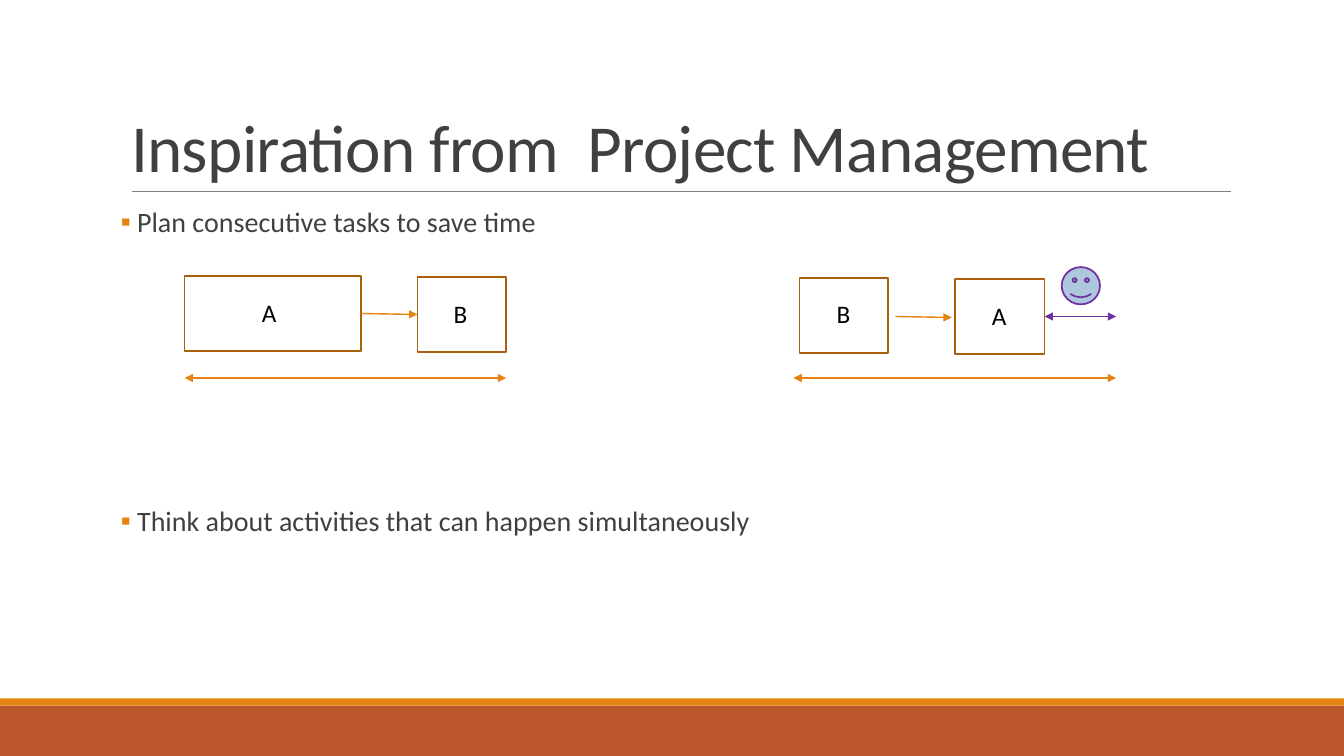
import dataclasses
import typing
import lxml.etree
import pptx
import pptx.dml.color
import pptx.enum.shapes
import pptx.enum.text
import pptx.oxml.ns
import pptx.util

RGB = pptx.dml.color.RGBColor
SHAPE = pptx.enum.shapes.MSO_SHAPE
TEXT = pptx.enum.text
Pt = pptx.util.Pt
qn = pptx.oxml.ns.qn

ORANGE = RGB(0xE4, 0x83, 0x12)
BROWN = RGB(0xA9, 0x61, 0x0D)
RUST = RGB(0xBD, 0x58, 0x2C)
PURPLE = RGB(0x70, 0x30, 0xA0)
BLUE = RGB(0xAD, 0xC8, 0xDD)
GRAY = RGB(0x80, 0x80, 0x80)
DARK = RGB(0x40, 0x40, 0x40)
BLACK = RGB(0, 0, 0)

SCALE = 9144
WIDE, HIGH = 1333, 750
TASK_HIGH = 74
LABEL_WIDE, LABEL_HIGH = 35, 40


@dataclasses.dataclass
class Block:
    left: int
    top: int
    width: int
    height: int
    fill: RGB | None = None
    line: RGB | None = None
    kind: SHAPE = SHAPE.RECTANGLE


@dataclasses.dataclass
class Task:
    name: str
    left: int
    top: int
    width: int
    label_left: int
    label_top: int


@dataclasses.dataclass
class Link:
    start: tuple[int, int]
    end: tuple[int, int]
    color: RGB = ORANGE
    weight: float = 1
    heads: tuple[str, ...] = ("tailEnd",)


BOTH = ("headEnd", "tailEnd")
BANDS = (
    Block(0, 700, WIDE, 50, fill=RUST),
    Block(0, 693, WIDE, 7, fill=ORANGE),
)
TASKS = (
    Task("A", 183, 274, 175, 250, 290),
    Task("B", 414, 275, 88, 440, 291),
    Task("B", 793, 276, 88, 820, 291),
    Task("A", 947, 277, 89, 974, 293),
)
LINKS = (
    Link((131, 190), (1221, 190), GRAY, 0.5, ()),
    Link((358, 311), (414, 312)),
    Link((888, 314), (944, 315)),
    Link((183, 375), (502, 375), heads=BOTH),
    Link((787, 375), (1107, 375), heads=BOTH),
    Link((1036, 314), (1107, 314), PURPLE, heads=BOTH),
)
SMILE = Block(1053, 265, 38, 37, BLUE, PURPLE, SHAPE.SMILEY_FACE)
POINTS = (
    ("Plan consecutive tasks to save time", 0),
    ("Think about activities that can happen simultaneously", 190),
)


def px(size: int) -> int:
    return size * SCALE


def apply(item: typing.Any, style: dict[str, typing.Any]) -> None:
    for key, value in style.items():
        setattr(item, key, value)


def place(shape: typing.Any, left: int, top: int, width: int, height: int) -> None:
    apply(shape, {"left": px(left), "top": px(top), "width": px(width), "height": px(height)})


def style_font(font: typing.Any, size: int, color: RGB) -> None:
    apply(font, {"name": "Calibri", "size": Pt(size)})
    font.color.rgb = color


def draw_block(shapes: typing.Any, block: Block) -> None:
    shape = shapes.add_shape(
        block.kind, px(block.left), px(block.top), px(block.width), px(block.height)
    )
    shape.shadow.inherit = False
    if block.fill is None:
        shape.fill.background()
    else:
        shape.fill.solid()
        shape.fill.fore_color.rgb = block.fill
    if block.line is None:
        shape.line.fill.background()
    else:
        shape.line.color.rgb = block.line
        shape.line.width = Pt(1.25)


def draw_task(shapes: typing.Any, task: Task) -> None:
    draw_block(shapes, Block(task.left, task.top, task.width, TASK_HIGH, line=BROWN))
    label = shapes.add_textbox(
        px(task.label_left), px(task.label_top), px(LABEL_WIDE), px(LABEL_HIGH)
    )
    label.text_frame.word_wrap = False
    label.text_frame.text = task.name
    style_font(label.text_frame.paragraphs[0].runs[0].font, 18, BLACK)


def draw_link(shapes: typing.Any, link: Link) -> None:
    line = shapes.add_connector(
        pptx.enum.shapes.MSO_CONNECTOR.STRAIGHT, *map(px, link.start + link.end)
    )
    line.line.color.rgb = link.color
    line.line.width = Pt(link.weight)
    props = line.line._get_or_add_ln()
    for head in link.heads:
        lxml.etree.SubElement(props, qn("a:" + head), type="triangle")
    lxml.etree.SubElement(line._element.spPr, qn("a:effectLst"))


def write_title(title: typing.Any) -> None:
    place(title, 120, 31, 1100, 159)
    frame = title.text_frame
    frame.text = "Inspiration from  Project Management"
    apply(frame, {
        "word_wrap": True,
        "auto_size": TEXT.MSO_AUTO_SIZE.NONE,
        "vertical_anchor": TEXT.MSO_ANCHOR.BOTTOM,
    })
    para = frame.paragraphs[0]
    apply(para, {"alignment": TEXT.PP_ALIGN.LEFT, "line_spacing": 0.85})
    run = para.runs[0]
    style_font(run.font, 48, DARK)
    run._r.get_or_add_rPr().set("spc", "-50")


def add_bullet(para: typing.Any) -> None:
    props = para._p.get_or_add_pPr()
    props.set("marL", str(px(16)))
    props.set("indent", str(px(-16)))
    color = lxml.etree.SubElement(props, qn("a:buClr"))
    lxml.etree.SubElement(color, qn("a:srgbClr"), val=str(ORANGE))
    lxml.etree.SubElement(props, qn("a:buFont"), typeface="Calibri")
    lxml.etree.SubElement(props, qn("a:buChar"), char="▪")


def write_body(body: typing.Any) -> None:
    place(body, 120, 202, 1100, 440)
    frame = body.text_frame
    apply(frame, {
        "word_wrap": True,
        "auto_size": TEXT.MSO_AUTO_SIZE.NONE,
        "vertical_anchor": TEXT.MSO_ANCHOR.TOP,
        "margin_left": 0,
        "margin_right": 0,
    })
    frame.text = "\n".join(text for text, _ in POINTS)
    for para, (_, gap) in zip(frame.paragraphs, POINTS):
        add_bullet(para)
        apply(para, {"line_spacing": 0.9, "space_before": Pt(gap), "space_after": Pt(2)})
        style_font(para.runs[0].font, 20, DARK)


def main() -> None:
    deck = pptx.Presentation()
    apply(deck, {"slide_width": px(WIDE), "slide_height": px(HIGH)})
    slide = deck.slides.add_slide(deck.slide_layouts[1])
    write_title(slide.shapes.title)
    write_body(slide.placeholders[1])
    for band in BANDS:
        draw_block(slide.shapes, band)
    for task in TASKS:
        draw_task(slide.shapes, task)
    for link in LINKS:
        draw_link(slide.shapes, link)
    draw_block(slide.shapes, SMILE)
    deck.save("out.pptx")


if __name__ == "__main__":
    main()
